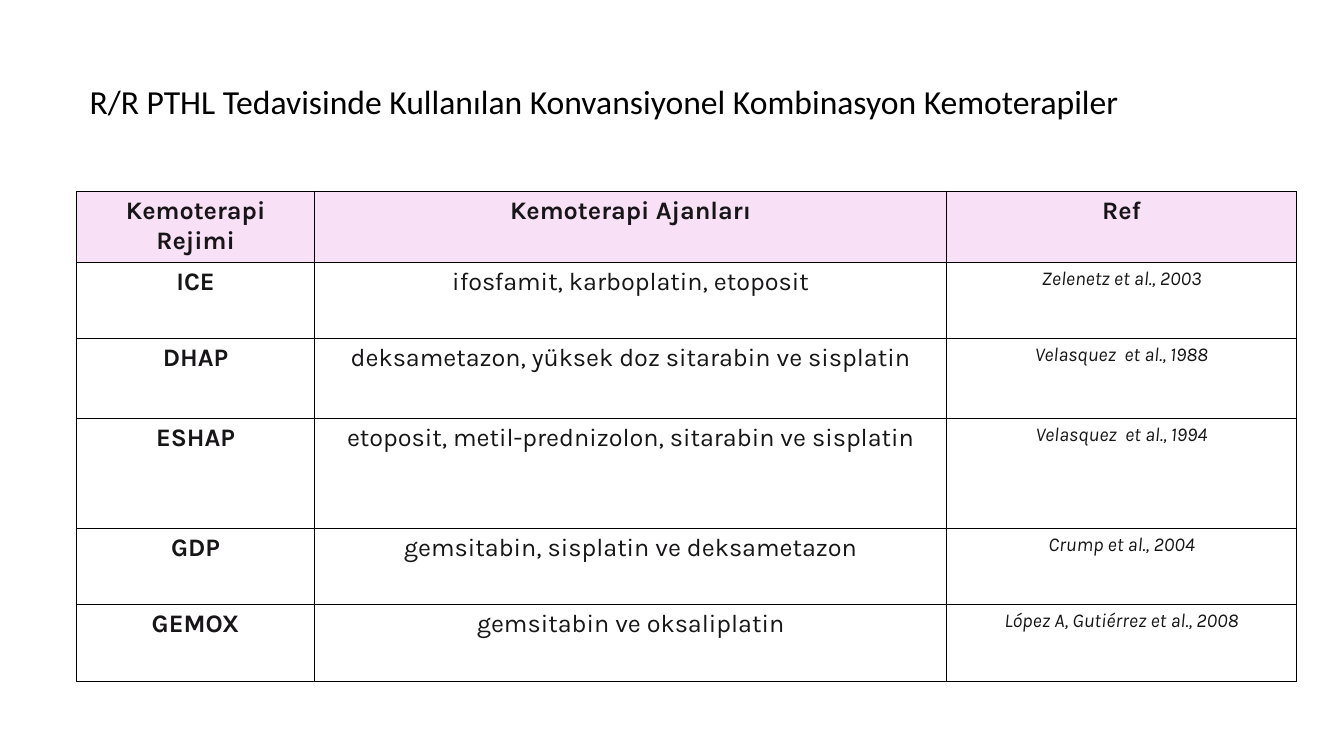
"""Build a slide with a table of conventional combination chemotherapies."""
from dataclasses import dataclass

from lxml import etree
from pptx import Presentation
from pptx.dml.color import RGBColor
from pptx.enum.text import MSO_ANCHOR, PP_ALIGN
from pptx.oxml.ns import qn
from pptx.util import Inches, Pt

LEFT, CENTER = PP_ALIGN.LEFT, PP_ALIGN.CENTER
MIDDLE = MSO_ANCHOR.MIDDLE


@dataclass(frozen=True)
class Theme:
    title_font: str = "Calibri"
    table_font: str = "Karla"
    title_color: str = "000000"
    text_color: str = "171517"
    header_fill: str = "F8E1F7"
    border: str = "000000"
    border_width: float = 1
    title_size: int = 24
    body_size: int = 18
    ref_size: int = 14


theme = Theme()


def write_text(tf, text, font=theme.table_font, size=theme.body_size,
               color=theme.text_color, bold=False, italic=False, align=CENTER):
    p = tf.paragraphs[0]
    p.alignment = align
    r = p.add_run()
    r.text = text
    r.font.name = font
    r.font.size = Pt(size)
    r.font.bold = bold
    r.font.italic = italic
    r.font.color.rgb = RGBColor.from_string(color)
    return p


def add_borders(cell):
    tc_pr = cell._tc.get_or_add_tcPr()
    for i, side in enumerate(("a:lnL", "a:lnR", "a:lnT", "a:lnB")):
        ln = etree.Element(qn(side), w=str(Pt(theme.border_width)))
        fill = etree.SubElement(ln, qn("a:solidFill"))
        etree.SubElement(fill, qn("a:srgbClr"), val=theme.border)
        tc_pr.insert(i, ln)


prs = Presentation()
prs.slide_width, prs.slide_height = Inches(13.33), Inches(7.5)
s = prs.slides.add_slide(prs.slide_layouts[6])

title = s.shapes.add_textbox(Inches(0.79), Inches(0.47), Inches(12.2), Inches(1.12))
tf = title.text_frame
tf.word_wrap = True
tf.vertical_anchor = MIDDLE
p = write_text(tf, "R/R PTHL Tedavisinde Kullanılan Konvansiyonel Kombinasyon Kemoterapiler",
               font=theme.title_font, size=theme.title_size,
               color=theme.title_color, align=LEFT)
p.line_spacing = 0.9

regimens = [
    ("Kemoterapi Rejimi", "Kemoterapi Ajanları", "Ref"),
    ("ICE", "ifosfamit, karboplatin, etoposit", "Zelenetz et al., 2003"),
    ("DHAP", "deksametazon, yüksek doz sitarabin ve sisplatin", "Velasquez  et al., 1988"),
    ("ESHAP", "etoposit, metil-prednizolon, sitarabin ve sisplatin", "Velasquez  et al., 1994"),
    ("GDP", "gemsitabin, sisplatin ve deksametazon", "Crump et al., 2004"),
    ("GEMOX", "gemsitabin ve oksaliplatin", "López A, Gutiérrez et al., 2008"),
]
col_widths = (2.36, 6.27, 3.47)
row_heights = (0.45, 0.76, 0.79, 1.09, 0.76, 0.76)

table = s.shapes.add_table(len(regimens), len(col_widths), Inches(0.76), Inches(1.9),
                           Inches(sum(col_widths)), Inches(sum(row_heights))).table
table.horz_banding = False
for column, width in zip(table.columns, col_widths):
    column.width = Inches(width)
for row, height in zip(table.rows, row_heights):
    row.height = Inches(height)

for i, regimen in enumerate(regimens):
    for j, text in enumerate(regimen):
        cell = table.cell(i, j)
        is_header = i == 0
        is_ref = j == 2 and not is_header
        write_text(cell.text_frame, text, bold=is_header or j == 0, italic=is_ref,
                   size=theme.ref_size if is_ref else theme.body_size)
        if is_header:
            cell.fill.solid()
            cell.fill.fore_color.rgb = RGBColor.from_string(theme.header_fill)
        else:
            cell.fill.background()
        add_borders(cell)

prs.save("out.pptx")
